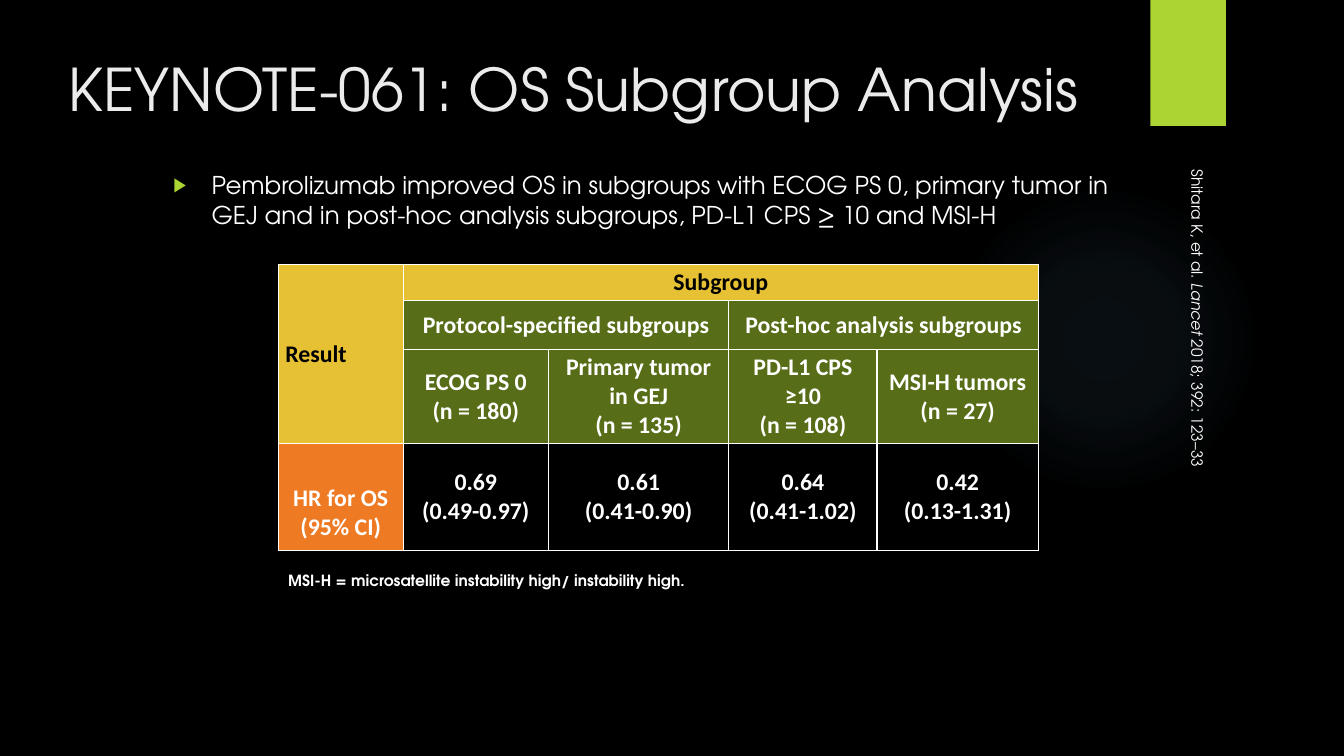
from lxml import etree
from pptx import Presentation
from pptx.dml.color import RGBColor
from pptx.enum.shapes import MSO_SHAPE as Shape
from pptx.enum.text import MSO_ANCHOR as Anchor, PP_ALIGN as Align
from pptx.oxml import parse_xml
from pptx.oxml.ns import nsdecls, qn
from pptx.util import Inches, Pt

BLACK = RGBColor(0x00, 0x00, 0x00)
WHITE = RGBColor(0xFF, 0xFF, 0xFF)
PALE = RGBColor(0xEB, 0xEB, 0xEB)
LIME = RGBColor(0xAC, 0xD4, 0x33)
GOLD = RGBColor(0xE6, 0xC1, 0x33)
GREEN = RGBColor(0x57, 0x6D, 0x17)
ORANGE = RGBColor(0xEF, 0x7A, 0x24)
GLOW = RGBColor(0x7A, 0xC4, 0xF0)
SANS, BODY = "TeX Gyre Adventor", "Calibri"

TITLE = "KEYNOTE-061: OS Subgroup Analysis"
POINT = ("Pembrolizumab improved OS in subgroups with ECOG PS 0, primary tumor in "
         "GEJ and in post-hoc analysis subgroups, PD-L1 CPS ≥ 10 and MSI-H")
CITE = "Shitara K, et al. *Lancet* 2018; 392: 123–33"  # asterisks mark italics
NOTE = "MSI-H = microsatellite instability high/ instability high."

COLS = [1.24, 1.44, 1.79, 1.47, 1.6]
ROWS = [0.36, 0.48, 0.94, 1.06]
# row, column, rows spanned, columns spanned, text, fill
HEADS = [
    (0, 0, 3, 1, "Result", GOLD),
    (0, 1, 1, 4, "Subgroup", GOLD),
    (1, 1, 1, 2, "Protocol-specified subgroups", GREEN),
    (1, 3, 1, 2, "Post-hoc analysis subgroups", GREEN),
    (3, 0, 1, 1, "HR for OS\n(95% CI)", ORANGE),
]
GROUPS = [
    ("ECOG PS 0\n(n = 180)", "0.69\n(0.49-0.97)"),
    ("Primary tumor\nin GEJ\n(n = 135)", "0.61\n(0.41-0.90)"),
    ("PD-L1 CPS ≥10\n(n = 108)", "0.64\n(0.41-1.02)"),
    ("MSI-H tumors\n(n = 27)", "0.42\n(0.13-1.31)"),
]
GLOW_STOPS = [(0, 7), (36, 6), (69, 0)]  # position, opacity in percent


def write(frame, text, size, font=SANS, color=WHITE, bold=False, align=Align.LEFT):
    """Fill a text frame: one paragraph a line, italics between asterisks."""
    frame.word_wrap = True
    for i, line in enumerate(text.split("\n")):
        para = frame.add_paragraph() if i else frame.paragraphs[0]
        para.alignment = align
        for j, part in enumerate(line.split("*")):
            run = para.add_run()
            run.text = part
            face = run.font
            face.name, face.size, face.bold = font, Pt(size), bold
            face.italic = j % 2 == 1
            face.color.rgb = color


def add_text(slide, box, text, size, **style):
    shape = slide.shapes.add_textbox(*map(Inches, box))
    write(shape.text_frame, text, size, **style)
    return shape


def add_block(slide, kind, box, color):
    shape = slide.shapes.add_shape(kind, *map(Inches, box))
    shape.shadow.inherit = False
    shape.fill.solid()
    shape.fill.fore_color.rgb = color
    shape.line.fill.background()
    return shape


def add_glow(slide, box):
    shape = add_block(slide, Shape.OVAL, box, GLOW)
    stops = "".join(
        f'<a:gs pos="{pos * 1000}"><a:srgbClr val="{GLOW}">'
        f'<a:alpha val="{alpha * 1000}"/></a:srgbClr></a:gs>'
        for pos, alpha in GLOW_STOPS)
    grad = parse_xml(
        f'<a:gradFill {nsdecls("a")} rotWithShape="1"><a:gsLst>{stops}</a:gsLst>'
        '<a:path path="circle"><a:fillToRect l="50000" t="50000" r="50000" b="50000"/>'
        '</a:path></a:gradFill>')
    props = shape.element.spPr
    props.replace(props.find(qn("a:solidFill")), grad)


def add_bullet(para, mark, color, indent):
    props = para._p.get_or_add_pPr()
    props.set("marL", str(Inches(indent)))
    props.set("indent", str(-Inches(indent)))
    tint = etree.SubElement(props, qn("a:buClr"))
    etree.SubElement(tint, qn("a:srgbClr"), val=str(color))
    etree.SubElement(props, qn("a:buSzPct"), val="80000")
    etree.SubElement(props, qn("a:buFont"), typeface="Arial")
    etree.SubElement(props, qn("a:buChar"), char=mark)


def add_border(cell):
    props = cell._tc.get_or_add_tcPr()
    for side in ("lnL", "lnR", "lnT", "lnB"):
        line = etree.SubElement(props, qn(f"a:{side}"), w=str(Pt(1)))
        fill = etree.SubElement(line, qn("a:solidFill"))
        etree.SubElement(fill, qn("a:srgbClr"), val=str(WHITE))


def add_grid(slide, left, top):
    table = slide.shapes.add_table(
        len(ROWS), len(COLS), Inches(left), Inches(top),
        Inches(sum(COLS)), Inches(sum(ROWS))).table
    table.first_row = table.horz_banding = False
    for col, width in zip(table.columns, COLS):
        col.width = Inches(width)
    for row, height in zip(table.rows, ROWS):
        row.height = Inches(height)
    for cell in table.iter_cells():
        add_border(cell)
        cell.fill.background()
        cell.margin_left = cell.margin_right = Inches(0.07)
        cell.margin_top = cell.margin_bottom = Inches(0.04)
        cell.vertical_anchor = Anchor.MIDDLE

    items = list(HEADS)
    for c, (head, ratio) in enumerate(GROUPS, 1):
        items += [(2, c, 1, 1, head, GREEN), (3, c, 1, 1, ratio, None)]
    for r, c, down, across, text, fill in items:
        cell = table.cell(r, c)
        if down * across > 1:
            cell.merge(table.cell(r + down - 1, c + across - 1))
        if fill is not None:
            cell.fill.solid()
            cell.fill.fore_color.rgb = fill
        write(cell.text_frame, text, 17, font=BODY, bold=True,
              color=BLACK if fill == GOLD else WHITE,
              align=Align.LEFT if text == "Result" else Align.CENTER)
    label = table.cell(3, 0)
    label.vertical_anchor = Anchor.BOTTOM
    label.margin_bottom = Inches(0.09)


def main():
    deck = Presentation()
    deck.slide_width, deck.slide_height = Inches(13.33), Inches(7.5)
    slide = deck.slides.add_slide(deck.slide_layouts[6])
    slide.background.fill.solid()
    slide.background.fill.fore_color.rgb = BLACK

    add_glow(slide, (9.41, 1.83, 3.08, 3.08))
    add_block(slide, Shape.RECTANGLE, (11.41, 0, 0.75, 1.25), LIME)
    cite = add_text(slide, (9.79, 3.53, 4.22, 0.33), CITE, 11)
    cite.rotation = 90
    cite.text_frame.vertical_anchor = Anchor.BOTTOM
    add_text(slide, (0.58, 0.47, 10.52, 1.06), TITLE, 42, color=PALE)
    point = add_text(slide, (1.62, 1.64, 9.49, 1.15), POINT, 17.5)
    add_bullet(point.text_frame.paragraphs[0], "▶", LIME, 0.38)
    add_grid(slide, 2.76, 2.62)
    add_text(slide, (2.76, 5.62, 5.08, 0.47), NOTE, 11, bold=True)
    deck.save("out.pptx")


if __name__ == "__main__":
    main()
